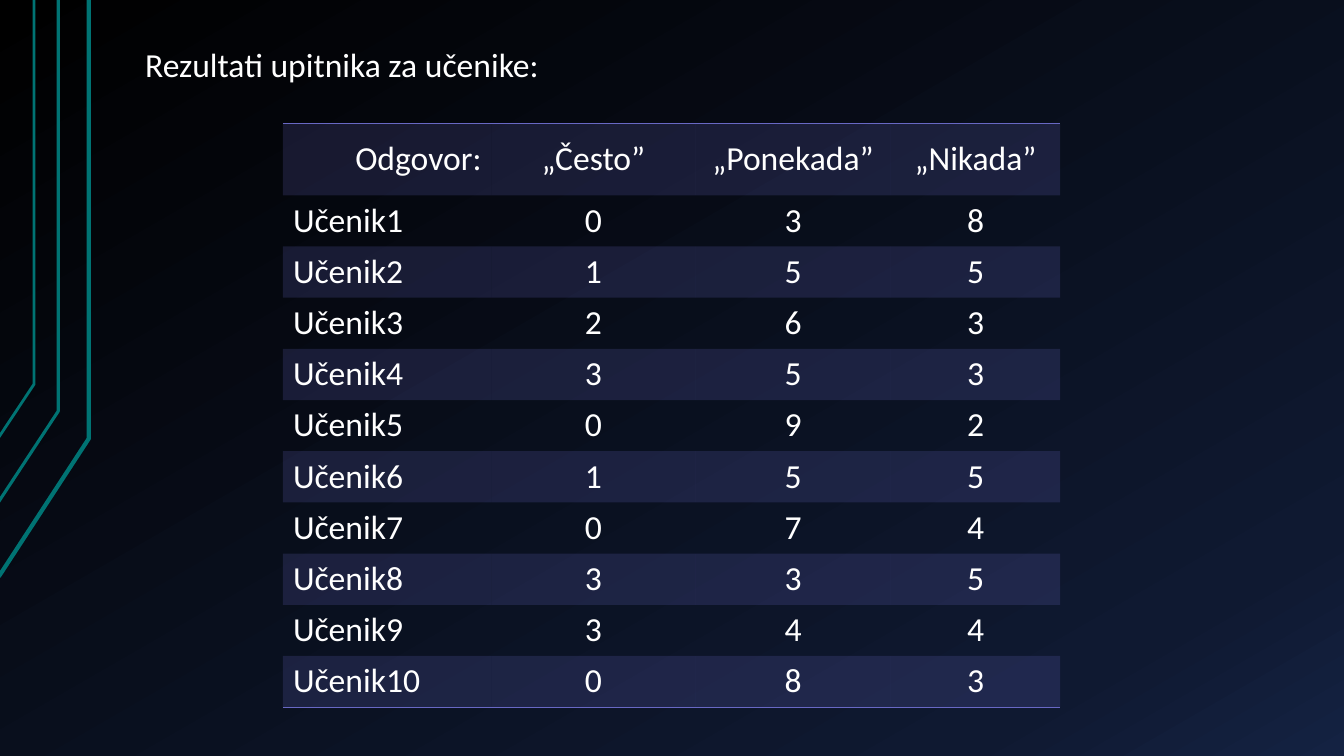
from copy import deepcopy

from lxml.etree import SubElement
from pptx import Presentation
from pptx.dml.color import RGBColor
from pptx.enum.text import MSO_ANCHOR, PP_ALIGN
from pptx.oxml import parse_xml
from pptx.oxml.ns import nsdecls, qn
from pptx.util import Cm, Pt

ACCENT = "6868C4"


def paint(color, value):
    color.rgb = RGBColor.from_string(value)


def write(paragraph, text, align):
    paragraph.alignment = align
    run = paragraph.add_run()
    run.text = text
    run.font.size = Pt(24)
    run.font.name = "Calibri"
    paint(run.font.color, "FFFFFF")


presentation = Presentation()
presentation.slide_width = Cm(33.87)
presentation.slide_height = Cm(19.05)
slide = presentation.slides.add_slide(presentation.slide_layouts[6])

night = slide.background.fill
night.gradient()
night.gradient_angle = 300
stop_list = slide.element.xpath(".//a:gsLst")[0]
stop_list.append(deepcopy(stop_list[-1]))
night_stops = [(0, "000000"), (0.85, "0F1931"), (1, "142242")]
for stop, (position, value) in zip(night.gradient_stops, night_stops):
    stop.position = position
    paint(stop.color, value)

circuit_lines = [
    (-0.03, 14.53, 2.24, 11.05, 3),
    (-0.05, 12.67, 1.47, 10.36, 2.25),
    (-0.03, 11.02, 0.86, 9.68, 2),
]
for left, bottom, right, bend, weight in circuit_lines:
    builder = slide.shapes.build_freeform(Cm(left), Cm(bottom))
    builder.add_line_segments([(Cm(right), Cm(bend)), (Cm(right), 0)], close=False)
    circuit = builder.convert_to_shape()
    circuit.shadow.inherit = False
    circuit.fill.background()
    paint(circuit.line.color, "007373")
    circuit.line.width = Pt(weight)

heading = slide.shapes.add_textbox(Cm(3.33), Cm(0.91), Cm(28.78), Cm(1.4)).text_frame
heading.word_wrap = True
heading.vertical_anchor = MSO_ANCHOR.BOTTOM
heading.margin_left = heading.margin_right = Cm(0.33)
heading.margin_top = heading.margin_bottom = Cm(0.18)
heading.paragraphs[0].line_spacing = 0.9
write(heading.paragraphs[0], "Rezultati upitnika za učenike:", PP_ALIGN.LEFT)

answers = [
    (0, 3, 8), (1, 5, 5), (2, 6, 3), (3, 5, 3), (0, 9, 2),
    (1, 5, 5), (0, 7, 4), (3, 3, 5), (3, 4, 4), (0, 8, 3),
]
rows = [("Odgovor:", "„Često”", "„Ponekada”", "„Nikada”")]
rows += [(f"Učenik{number}", *counts) for number, counts in enumerate(answers, 1)]
column_widths = [5.26, 5.13, 4.93, 4.27]
last = len(rows) - 1

results = slide.shapes.add_table(
    len(rows), len(column_widths), Cm(7.13), Cm(3.12), Cm(19.59), Cm(14.7)
).table
results.first_row = False
results.horz_banding = False
style_id = slide.element.xpath(".//a:tableStyleId")[0]
style_id.text = "{2D5ABB26-0587-4C30-8999-92F81FD0307C}"
for column, width in zip(results.columns, column_widths):
    column.width = Cm(width)

for r, values in enumerate(rows):
    results.rows[r].height = Cm(1.8 if r == 0 else 1.29)
    for c, value in enumerate(values):
        cell = results.cell(r, c)
        align = PP_ALIGN.CENTER
        if c == 0:
            align = PP_ALIGN.RIGHT if r == 0 else PP_ALIGN.LEFT
        write(cell.text_frame.paragraphs[0], str(value), align)
        cell.vertical_anchor = MSO_ANCHOR.MIDDLE if r == 0 else MSO_ANCHOR.TOP
        if r % 2:
            cell.fill.background()
        else:
            cell.fill.solid()
            paint(cell.fill.fore_color, ACCENT)
            properties = cell.fill._xPr
            tint = properties.find(qn("a:solidFill"))[0]
            SubElement(tint, qn("a:alpha"), val="20000")
            if r in (0, last):
                side = "lnT" if r == 0 else "lnB"
                properties.insert(0, parse_xml(
                    f'<a:{side} {nsdecls("a")} w="{Pt(1)}"><a:solidFill>'
                    f'<a:srgbClr val="{ACCENT}"/></a:solidFill></a:{side}>'
                ))

presentation.save("out.pptx")
